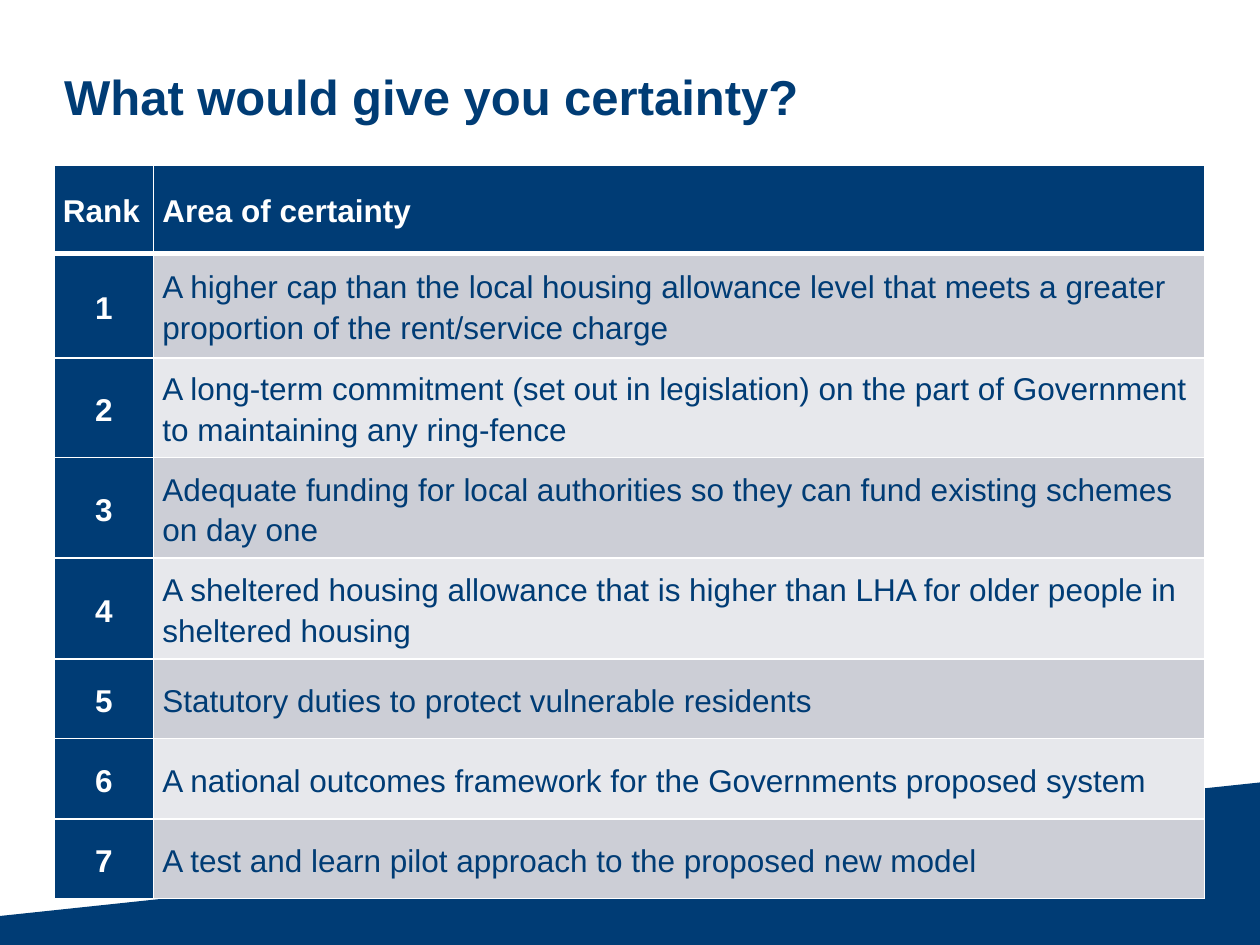
"""Build the slide ranking what would give respondents certainty."""
from dataclasses import dataclass

from lxml.etree import SubElement
from pptx import Presentation
from pptx.dml.color import RGBColor
from pptx.enum.text import MSO_ANCHOR as Anchor, PP_ALIGN as Align
from pptx.oxml.ns import qn
from pptx.util import Inches, Pt


@dataclass(frozen=True)
class Theme:
    navy: str = "003C75"
    white: str = "FFFFFF"
    bands: tuple = ("CCCED6", "E7E8EC")
    font: str = "Arial"
    title_size: int = 28
    table_size: int = 18
    rule: int = 1
    header_rule: int = 3


theme = Theme()


def add_run(paragraph, text, size, color, bold):
    run = paragraph.add_run()
    run.text = text
    run.font.name = theme.font
    run.font.size = Pt(size)
    run.font.bold = bold
    run.font.color.rgb = RGBColor.from_string(color)


def add_border(cell, side, width):
    line = SubElement(cell._tc.get_or_add_tcPr(), qn(f"a:ln{side}"), w=str(Pt(width)))
    fill = SubElement(line, qn("a:solidFill"))
    SubElement(fill, qn("a:srgbClr"), val=theme.white)


presentation = Presentation()
presentation.slide_width = Inches(10)
presentation.slide_height = Inches(7.5)
slide = presentation.slides.add_slide(presentation.slide_layouts[5])

heading = slide.shapes.title
heading.left, heading.top = Inches(0.41), Inches(0.21)
heading.width, heading.height = Inches(9), Inches(1.1)
heading.text_frame.vertical_anchor = Anchor.MIDDLE
heading_line = heading.text_frame.paragraphs[0]
heading_line.alignment = Align.LEFT
add_run(heading_line, "What would give you certainty?", theme.title_size, theme.navy, True)

wedge_outline = slide.shapes.build_freeform(Inches(10), Inches(6.21))
wedge_outline.add_line_segments(
    [(Inches(x), Inches(y)) for x, y in ((10, 7.5), (0, 7.5), (0, 7.27))], close=True
)
wedge = wedge_outline.convert_to_shape()
wedge.shadow.inherit = False
wedge.fill.solid()
wedge.fill.fore_color.rgb = RGBColor.from_string(theme.navy)
wedge.line.fill.background()

areas = [
    "A higher cap than the local housing allowance level that meets a greater "
    "proportion of the rent/service charge",
    "A long-term commitment (set out in legislation) on the part of Government "
    "to maintaining any ring-fence",
    "Adequate funding for local authorities so they can fund existing schemes on day one",
    "A sheltered housing allowance that is higher than LHA for older people in sheltered housing",
    "Statutory duties to protect vulnerable residents",
    "A national outcomes framework for the Governments proposed system",
    "A test and learn pilot approach to the proposed new model",
]
ranking = [("Rank", "Area of certainty")]
ranking += [(str(rank), area) for rank, area in enumerate(areas, 1)]
column_widths = (0.79, 8.34)
row_heights = (0.7, 0.83, 0.79, 0.8, 0.8, 0.63, 0.64, 0.63)

table = slide.shapes.add_table(
    len(ranking), len(column_widths), Inches(0.43), Inches(1.31),
    Inches(sum(column_widths)), Inches(sum(row_heights)),
).table
table.horz_banding = False
for column, width in zip(table.columns, column_widths):
    column.width = Inches(width)

for row_index, entry in enumerate(ranking):
    table.rows[row_index].height = Inches(row_heights[row_index])
    is_header = row_index == 0
    for column_index, wording in enumerate(entry):
        is_dark = is_header or column_index == 0
        cell = table.cell(row_index, column_index)
        cell.margin_left = cell.margin_right = Inches(0.07)
        cell.margin_top = cell.margin_bottom = 0
        cell.vertical_anchor = Anchor.MIDDLE
        add_border(cell, "L", theme.rule)
        add_border(cell, "R", theme.rule)
        add_border(cell, "T", theme.header_rule if row_index == 1 else theme.rule)
        add_border(cell, "B", theme.header_rule if is_header else theme.rule)
        cell.fill.solid()
        cell.fill.fore_color.rgb = RGBColor.from_string(
            theme.navy if is_dark else theme.bands[(row_index - 1) % 2]
        )
        paragraph = cell.text_frame.paragraphs[0]
        paragraph.line_spacing = 1.15
        paragraph.alignment = Align.CENTER if is_dark and not is_header else Align.LEFT
        text_color = theme.white if is_dark else theme.navy
        add_run(paragraph, wording, theme.table_size, text_color, is_dark)

presentation.save("out.pptx")
